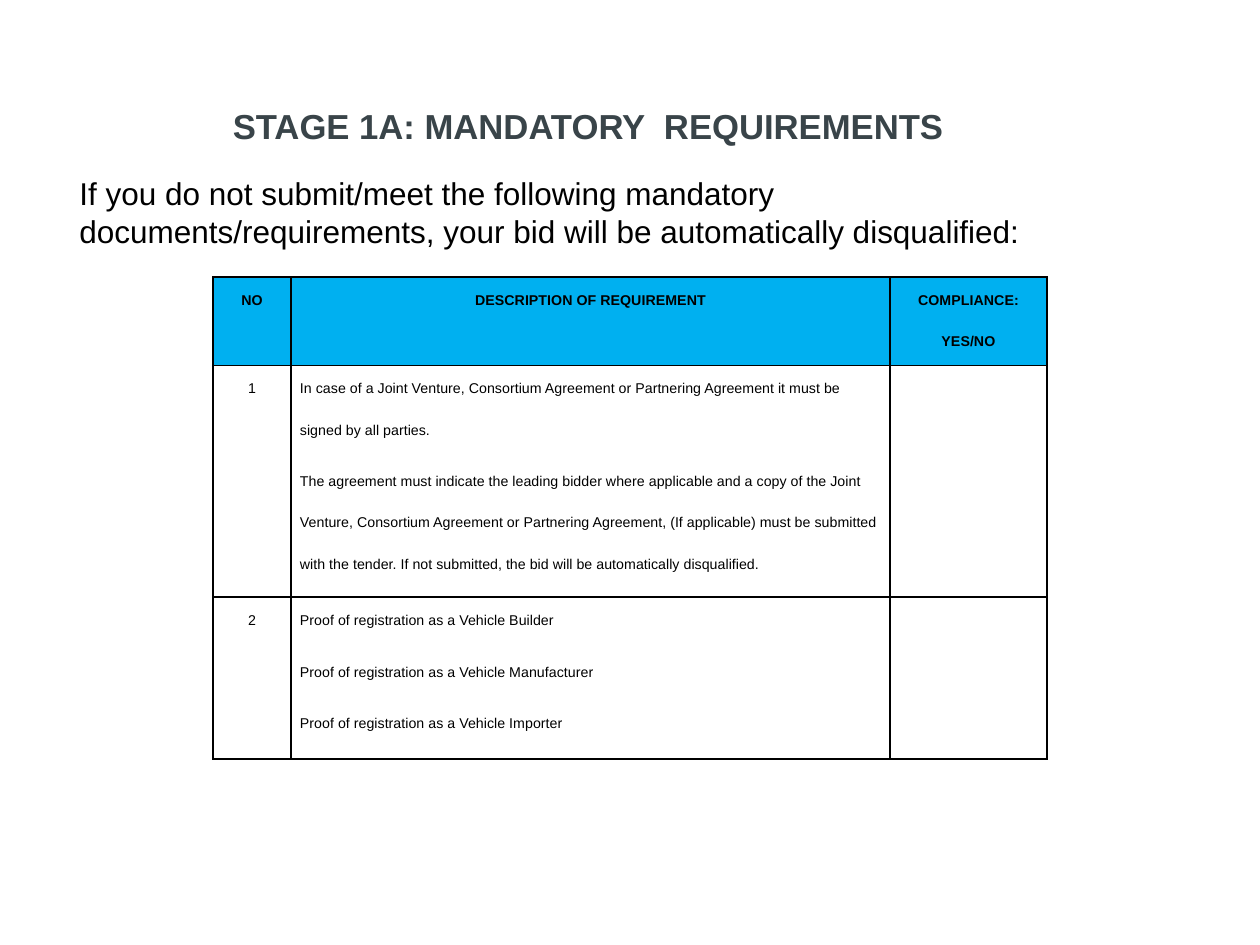
from dataclasses import dataclass

from lxml import etree
from pptx import Presentation
from pptx.dml.color import RGBColor
from pptx.enum.text import MSO_ANCHOR, MSO_AUTO_SIZE, PP_ALIGN
from pptx.oxml.ns import qn
from pptx.util import Emu, Pt

LEFT, CENTER = PP_ALIGN.LEFT, PP_ALIGN.CENTER
BOTTOM, TOP = MSO_ANCHOR.BOTTOM, MSO_ANCHOR.TOP
GROW = MSO_AUTO_SIZE.SHAPE_TO_FIT_TEXT
PIXELS_PER_INCH = 126


@dataclass(frozen=True)
class Theme:
    font: str = "Arial"
    title_color: str = "394449"
    text_color: str = "000000"
    header_fill: str = "00B0F0"
    border_color: str = "000000"
    title_size: float = 19.8
    intro_size: float = 18
    table_size: float = 14
    border_width: float = 1


@dataclass(frozen=True)
class Box:
    left: int
    top: int
    width: int
    height: int

    def emu(self) -> tuple[Emu, ...]:
        return tuple(px(value) for value in (self.left, self.top, self.width, self.height))


@dataclass(frozen=True)
class Requirement:
    number: str
    description: tuple[str, ...]


THEME = Theme()
TITLE_BOX = Box(21, 71, 1134, 76)
INTRO_BOX = Box(67, 168, 1065, 89)
COLUMN_WIDTHS = (78, 599, 157)
ROW_HEIGHTS = (74, 232, 162)
TABLE_BOX = Box(213, 277, sum(COLUMN_WIDTHS), sum(ROW_HEIGHTS))
CELL_MARGIN = 9

HEADERS = ("NO", "DESCRIPTION OF REQUIREMENT", "COMPLIANCE: YES/NO")
REQUIREMENTS = (
    Requirement("1", (
        "In case of a Joint Venture, Consortium Agreement or Partnering Agreement "
        "it must be signed by all parties.",
        "The agreement must indicate the leading bidder where applicable and a copy of the "
        "Joint Venture, Consortium Agreement or Partnering Agreement, (If applicable) must be "
        "submitted with the tender. If not submitted, the bid will be automatically disqualified.",
    )),
    Requirement("2", tuple(
        f"Proof of registration as a Vehicle {role}"
        for role in ("Builder", "Manufacturer", "Importer")
    )),
)


def px(value: int) -> Emu:
    return Emu(round(value * 914400 / PIXELS_PER_INCH))


def write_text(frame, *lines: str, size: float, color: str = THEME.text_color,
               bold: bool = False, align=LEFT, line_spacing: float = 1.0,
               space_after: float = 0, baseline: int = 0) -> None:
    for index, line in enumerate(lines):
        paragraph = frame.add_paragraph() if index else frame.paragraphs[0]
        paragraph.alignment = align
        paragraph.line_spacing = line_spacing
        paragraph.space_after = Pt(space_after)
        run = paragraph.add_run()
        run.text = line
        run.font.name = THEME.font
        run.font.size = Pt(size)
        run.font.bold = bold
        run.font.color.rgb = RGBColor.from_string(color)
        if baseline:
            run._r.get_or_add_rPr().set("baseline", str(baseline * 1000))


def add_text_box(slide, box: Box, anchor=TOP):
    frame = slide.shapes.add_textbox(*box.emu()).text_frame
    frame.word_wrap = True
    frame.vertical_anchor = anchor
    return frame


def add_borders(cell) -> None:
    properties = cell._tc.get_or_add_tcPr()
    for index, side in enumerate(("lnL", "lnR", "lnT", "lnB")):
        line = etree.Element(qn(f"a:{side}"), w=str(Pt(THEME.border_width)))
        fill = etree.SubElement(line, qn("a:solidFill"))
        etree.SubElement(fill, qn("a:srgbClr"), val=THEME.border_color)
        properties.insert(index, line)


def fill_cell(cell, *lines: str, header: bool = False, align=LEFT) -> None:
    cell.margin_left = cell.margin_right = px(CELL_MARGIN)
    cell.margin_top = cell.margin_bottom = 0
    if header:
        cell.fill.solid()
        cell.fill.fore_color.rgb = RGBColor.from_string(THEME.header_fill)
    else:
        cell.fill.background()
    write_text(cell.text_frame, *lines, size=THEME.table_size, bold=header, align=align,
               line_spacing=1.5, space_after=5.8, baseline=30)
    add_borders(cell)


def add_requirements_table(slide) -> None:
    table = slide.shapes.add_table(
        len(ROW_HEIGHTS), len(COLUMN_WIDTHS), *TABLE_BOX.emu()).table
    table.first_row = table.horz_banding = False
    for column, width in zip(table.columns, COLUMN_WIDTHS):
        column.width = px(width)
    for row, height in zip(table.rows, ROW_HEIGHTS):
        row.height = px(height)
    for index, label in enumerate(HEADERS):
        fill_cell(table.cell(0, index), label, header=True, align=CENTER)
    for index, requirement in enumerate(REQUIREMENTS, start=1):
        fill_cell(table.cell(index, 0), requirement.number, align=CENTER)
        fill_cell(table.cell(index, 1), *requirement.description)
        fill_cell(table.cell(index, 2))


def main() -> None:
    presentation = Presentation()
    presentation.slide_width = px(1260)
    presentation.slide_height = px(945)
    slide = presentation.slides.add_slide(presentation.slide_layouts[6])

    title = add_text_box(slide, TITLE_BOX, anchor=BOTTOM)
    title.margin_bottom = 0
    write_text(title, "STAGE 1A: MANDATORY  REQUIREMENTS", size=THEME.title_size,
               color=THEME.title_color, bold=True, align=CENTER)

    intro = add_text_box(slide, INTRO_BOX)
    intro.auto_size = GROW
    write_text(intro, "If you do not submit/meet the following mandatory "
               "documents/requirements, your bid will be automatically disqualified:",
               size=THEME.intro_size)

    add_requirements_table(slide)
    presentation.save("out.pptx")


if __name__ == "__main__":
    main()
